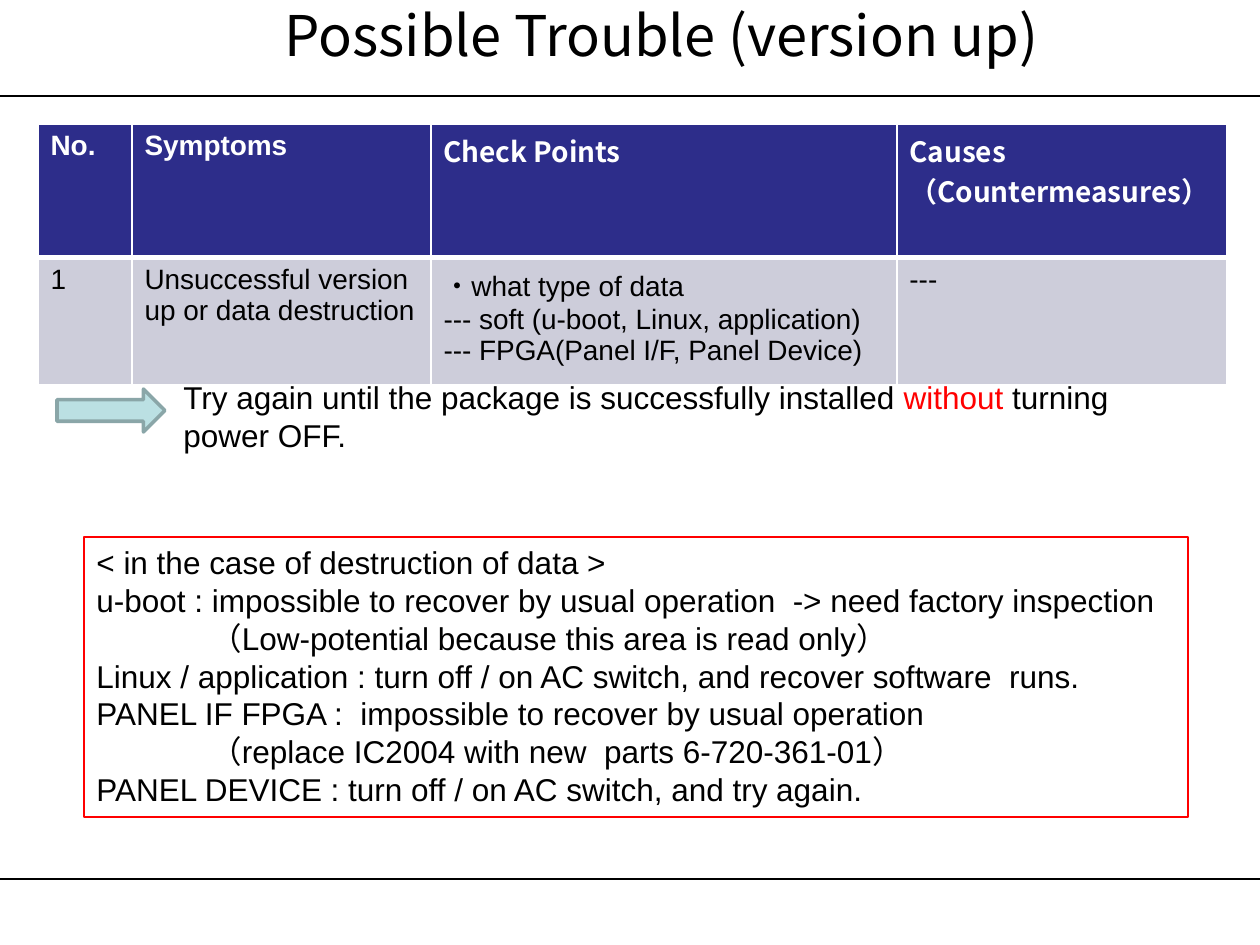
"""Build the version-up troubleshooting slide."""
from lxml import etree
from pptx import Presentation
from pptx import util as u
from pptx.dml.color import RGBColor
from pptx.enum import shapes, text
from pptx.oxml.ns import qn

COLORS = {"black": "000000", "white": "FFFFFF", "red": "FF0000",
          "head": "2D2D8A", "body": "CDCDDA",
          "arrow": "BBE0E3", "arrow_edge": "8AA6A8"}
LATIN, CJK = "Arial", "Noto Sans CJK JP"
HEADERS = [("No.", LATIN), ("Symptoms", LATIN), ("Check Points", CJK),
           ("Causes\n（Countermeasures）", CJK)]
ROW = ["1", "Unsuccessful version up or data destruction",
       "・what type of data\n--- soft (u-boot, Linux, application)\n"
       "--- FPGA(Panel I/F, Panel Device)", "---"]
RECOVERY = [
    ("< in the case of destruction of data >", 0),
    ("u-boot : impossible to recover by usual operation  -> need factory inspection", 0),
    ("（Low-potential because this area is read only）", 114),
    ("Linux / application : turn off / on AC switch, and recover software  runs.", 0),
    ("PANEL IF FPGA :  impossible to recover by usual operation", 0),
    ("（replace IC2004 with new  parts 6-720-361-01）", 114),
    ("PANEL DEVICE : turn off / on AC switch, and try again.", 0),
]
ADVICE = [("Try again until the package is successfully installed ", "black"),
          ("without ", "red"), ("turning power OFF.", "black")]


def px(n):
    """Turn pixels into EMU."""
    return u.Emu(round(n * 914400 / 126))


def rgb(name):
    """Look up a named colour."""
    return RGBColor.from_string(COLORS[name])


def set_font(p, size, name=LATIN, color="black", bold=False):
    """Format a whole paragraph."""
    p.font.size, p.font.name, p.font.bold = u.Pt(size), name, bold
    p.font.color.rgb = rgb(color)


def set_line(sp, color, width):
    """Give a shape or connector a solid line."""
    sp.line.color.rgb = rgb(color)
    sp.line.width = u.Pt(width)


def add_rule(slide, y):
    """Draw a full-width horizontal rule."""
    line = slide.shapes.add_connector(
        shapes.MSO_CONNECTOR.STRAIGHT, 0, px(y), px(1260), px(y))
    set_line(line, "black", 0.75)
    etree.SubElement(line._element.spPr, qn("a:effectLst"))


def set_title(slide, title):
    """Place and format the title placeholder."""
    sp = slide.shapes.title
    sp.left, sp.top, sp.width, sp.height = px(95), px(0), px(1134), px(96)
    tf = sp.text_frame
    tf.text = title
    tf.margin_top = 0
    tf.vertical_anchor = text.MSO_ANCHOR.TOP
    p = tf.paragraphs[0]
    p.alignment = text.PP_ALIGN.CENTER
    set_font(p, 32, CJK)


def set_borders(cell, bottom):
    """Draw white borders round a cell."""
    tc_pr = cell._tc.get_or_add_tcPr()
    for i, (side, width) in enumerate(
            [("lnL", 1), ("lnR", 1), ("lnT", 1), ("lnB", bottom)]):
        ln = etree.Element(qn(f"a:{side}"), w=str(u.Pt(width)))
        fill = etree.SubElement(ln, qn("a:solidFill"))
        etree.SubElement(fill, qn("a:srgbClr"), val=COLORS["white"])
        tc_pr.insert(i, ln)


def fill_cell(cell, content, name, color, fill, bold, bottom):
    """Write and format one table cell."""
    cell.text = content
    cell.fill.solid()
    cell.fill.fore_color.rgb = rgb(fill)
    for p in cell.text_frame.paragraphs:
        set_font(p, 16, name, color, bold)
    set_borders(cell, bottom)


def add_trouble_table(slide):
    """Add the table of symptoms and check points."""
    widths, heights = [94, 299, 466, 330], [71, 127]
    table = slide.shapes.add_table(
        2, 4, px(38), px(124), px(sum(widths)), px(sum(heights))).table
    for row, height in zip(table.rows, heights):
        row.height = px(height)
    for i, width in enumerate(widths):
        table.columns[i].width = px(width)
        header, name = HEADERS[i]
        fill_cell(table.cell(0, i), header, name, "white", "head", True, 3)
        fill_cell(table.cell(1, i), ROW[i], LATIN, "black", "body", False, 1)


def add_shape(slide, kind, box, fill, line, width):
    """Add a preset shape, unfilled when fill is None."""
    sp = slide.shapes.add_shape(kind, *map(px, box))
    sp.shadow.inherit = False
    if fill:
        sp.fill.solid()
        sp.fill.fore_color.rgb = rgb(fill)
    else:
        sp.fill.background()
    set_line(sp, line, width)
    return sp


def add_recovery_box(slide):
    """Add the framed recovery notes."""
    sp = add_shape(slide, shapes.MSO_SHAPE.RECTANGLE, (84, 537, 1104, 280),
                   None, "red", 0.75)
    tf = sp.text_frame
    tf.vertical_anchor = text.MSO_ANCHOR.TOP
    tf.text = "\n".join(content for content, _ in RECOVERY)
    for p, (_, indent) in zip(tf.paragraphs, RECOVERY):
        p.alignment = text.PP_ALIGN.LEFT
        if indent:
            p._p.get_or_add_pPr().set("marL", str(px(indent)))
        set_font(p, 18)


def add_advice(slide):
    """Add the advice next to the arrow."""
    tf = slide.shapes.add_textbox(px(171), px(372), px(951), px(89)).text_frame
    tf.word_wrap = True
    p = tf.paragraphs[0]
    p.font.size, p.font.name = u.Pt(18), LATIN
    for content, color in ADVICE:
        r = p.add_run()
        r.text = content
        r.font.color.rgb = rgb(color)


def main():
    """Build and save the slide."""
    prs = Presentation()
    prs.slide_width, prs.slide_height = px(1260), px(945)
    slide = prs.slides.add_slide(prs.slide_layouts[5])
    for y in (879, 96):
        add_rule(slide, y)
    set_title(slide, "Possible Trouble (version up)")
    add_trouble_table(slide)
    add_shape(slide, shapes.MSO_SHAPE.RIGHT_ARROW, (57, 389, 108, 43),
              "arrow", "arrow_edge", 2)
    add_recovery_box(slide)
    add_advice(slide)
    prs.save("out.pptx")


if __name__ == "__main__":
    main()
